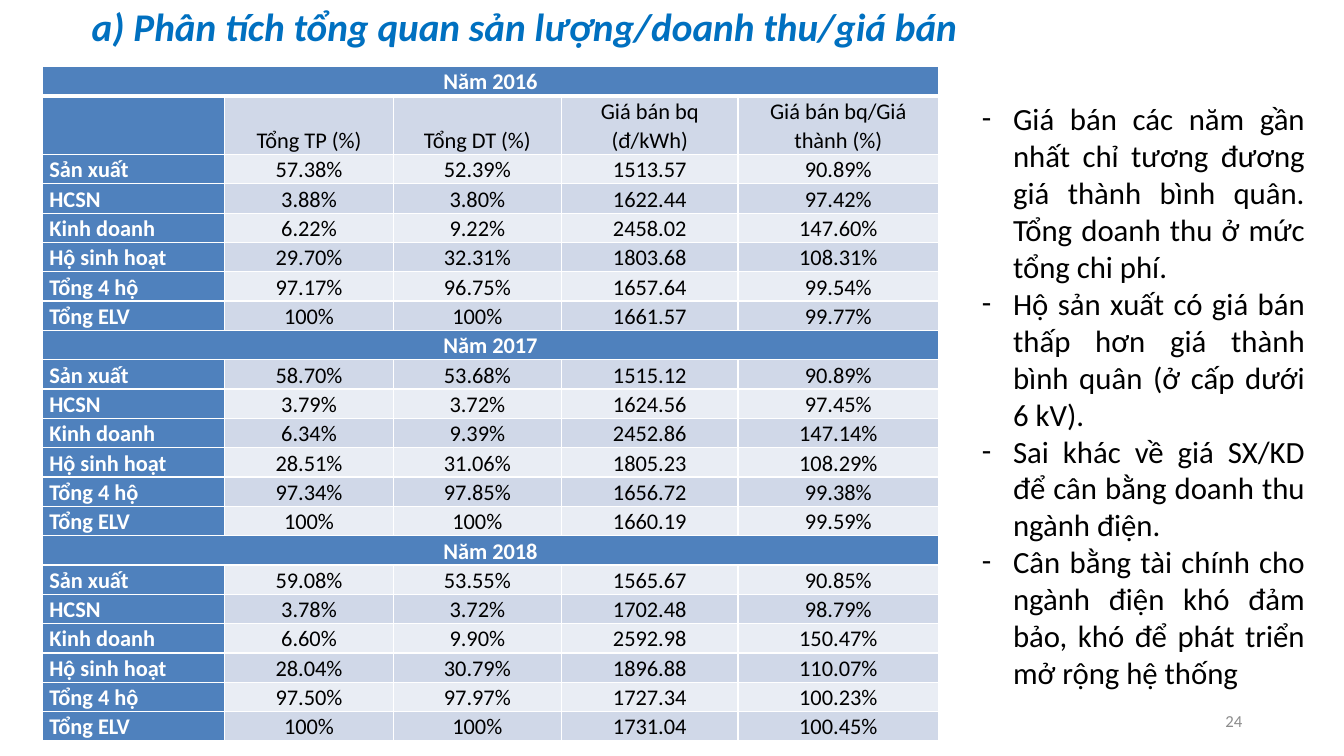
from lxml.etree import SubElement
from pptx import Presentation
from pptx.dml.color import RGBColor
from pptx.enum.text import MSO_ANCHOR as Anchor, PP_ALIGN as Align
from pptx.oxml.ns import qn
from pptx.util import Inches, Pt

# Content
TITLE = "a) Phân tích tổng quan sản lượng/doanh thu/giá bán"
PAGE_NUMBER = "24"
HEADINGS = ("", "Tổng TP (%)", "Tổng DT (%)", "Giá bán bq (đ/kWh)", "Giá bán bq/Giá thành (%)")
CUSTOMERS = ("Sản xuất", "HCSN", "Kinh doanh", "Hộ sinh hoạt", "Tổng 4 hộ", "Tổng ELV")
YEARS = {
    "Năm 2016": (
        ("57.38%", "52.39%", "1513.57", "90.89%"),
        ("3.88%", "3.80%", "1622.44", "97.42%"),
        ("6.22%", "9.22%", "2458.02", "147.60%"),
        ("29.70%", "32.31%", "1803.68", "108.31%"),
        ("97.17%", "96.75%", "1657.64", "99.54%"),
        ("100%", "100%", "1661.57", "99.77%"),
    ),
    "Năm 2017": (
        ("58.70%", "53.68%", "1515.12", "90.89%"),
        ("3.79%", "3.72%", "1624.56", "97.45%"),
        ("6.34%", "9.39%", "2452.86", "147.14%"),
        ("28.51%", "31.06%", "1805.23", "108.29%"),
        ("97.34%", "97.85%", "1656.72", "99.38%"),
        ("100%", "100%", "1660.19", "99.59%"),
    ),
    "Năm 2018": (
        ("59.08%", "53.55%", "1565.67", "90.85%"),
        ("3.78%", "3.72%", "1702.48", "98.79%"),
        ("6.60%", "9.90%", "2592.98", "150.47%"),
        ("28.04%", "30.79%", "1896.88", "110.07%"),
        ("97.50%", "97.97%", "1727.34", "100.23%"),
        ("100%", "100%", "1731.04", "100.45%"),
    ),
}
REMARKS = (
    "Giá bán các năm gần nhất chỉ tương đương giá thành bình quân. "
    "Tổng doanh thu ở mức tổng chi phí.",
    "Hộ sản xuất có giá bán thấp hơn giá thành bình quân (ở cấp dưới 6 kV).",
    "Sai khác về giá SX/KD để cân bằng doanh thu ngành điện.",
    "Cân bằng tài chính cho ngành điện khó đảm bảo, khó để phát triển mở rộng hệ thống",
)


class Theme:
    font = "Calibri"
    title, header, dark_band, light_band = "0070C0", "4F81BD", "D0D8E8", "E9EDF4"
    white, black, grey = "FFFFFF", "000000", "8C8C8C"
    title_size, remark_size, table_size, page_size = 28, 22, 16, 12


# Layout, in inches
COLUMN_WIDTHS = (1.81, 1.67, 1.67, 1.75, 1.99)
ROW_HEIGHT, HEADING_HEIGHT = 0.28, 0.46
REMARK_INDENT = 0.31


def write(paragraph, text, size, color=Theme.black, bold=False, italic=False,
          align=Align.LEFT, spacing=None):
    paragraph.alignment = align
    paragraph.line_spacing = spacing
    run = paragraph.add_run()
    run.text = text
    run.font.name, run.font.size = Theme.font, Pt(size)
    run.font.bold, run.font.italic = bold, italic
    run.font.color.rgb = RGBColor.from_string(color)


def set_borders(cell, **widths):
    properties = cell._tc.get_or_add_tcPr()
    for position, side in enumerate("LRTB"):
        line = SubElement(properties, qn(f"a:ln{side}"), w=str(Pt(widths.get(side, 1))))
        SubElement(SubElement(line, qn("a:solidFill")), qn("a:srgbClr"), val=Theme.white)
        properties.insert(position, line)


def add_bullet(paragraph, indent):
    properties = paragraph._p.get_or_add_pPr()
    properties.set("marL", str(Inches(indent)))
    properties.set("indent", str(-Inches(indent)))
    SubElement(properties, qn("a:buFont"), typeface=Theme.font)
    SubElement(properties, qn("a:buChar"), char="-")


def build_rows():
    rows = []
    for year, figures in YEARS.items():
        rows.append((year, "", "", "", ""))
        if len(rows) == 1:
            rows.append(HEADINGS)
        rows += [(customer, *values) for customer, values in zip(CUSTOMERS, figures)]
    return rows


def add_price_table(slide):
    rows = build_rows()
    height = ROW_HEIGHT * (len(rows) - 1) + HEADING_HEIGHT
    table = slide.shapes.add_table(
        len(rows), len(COLUMN_WIDTHS), Inches(0.42), Inches(0.66),
        Inches(sum(COLUMN_WIDTHS)), Inches(height)).table
    for column, width in zip(table.columns, COLUMN_WIDTHS):
        column.width = Inches(width)
    for r, values in enumerate(rows):
        is_year = values[0] in YEARS
        table.rows[r].height = Inches(HEADING_HEIGHT if values == HEADINGS else ROW_HEIGHT)
        if is_year:
            table.cell(r, 0).merge(table.cell(r, len(COLUMN_WIDTHS) - 1))
        for c, value in enumerate(values):
            cell = table.cell(r, c)
            is_header = is_year or c == 0
            band = Theme.dark_band if r % 2 else Theme.light_band
            cell.fill.solid()
            cell.fill.fore_color.rgb = RGBColor.from_string(Theme.header if is_header else band)
            set_borders(cell, T=3 if r == 1 else 1, B=3 if r == 0 else 1)
            cell.vertical_anchor = Anchor.BOTTOM
            cell.margin_left = cell.margin_right = Inches(0.07)
            cell.margin_top = cell.margin_bottom = 0
            if value:
                write(cell.text_frame.paragraphs[0], value, Theme.table_size,
                      color=Theme.white if is_header else Theme.black, bold=is_header,
                      align=Align.CENTER if is_year or c else Align.LEFT, spacing=1.07)


def add_frame(slide, left, top, width, height, anchor=Anchor.TOP):
    box = slide.shapes.add_textbox(Inches(left), Inches(top), Inches(width), Inches(height))
    box.text_frame.word_wrap = True
    box.text_frame.vertical_anchor = anchor
    return box.text_frame


def main():
    deck = Presentation()
    deck.slide_width, deck.slide_height = Inches(13.33), Inches(7.5)
    slide = deck.slides.add_slide(deck.slide_layouts[5])

    # Title
    title = slide.shapes.title
    title.left, title.top, title.width, title.height = map(Inches, (0.81, 0, 11.5, 0.58))
    title.text_frame.vertical_anchor = Anchor.MIDDLE
    write(title.text_frame.paragraphs[0], TITLE, Theme.title_size, color=Theme.title,
          bold=True, italic=True, align=Align.JUSTIFY, spacing=0.9)

    # Table of volume, revenue and price by year
    add_price_table(slide)

    # Remarks
    remarks = add_frame(slide, 9.64, 0.94, 3.4, 6.02)
    for i, remark in enumerate(REMARKS):
        paragraph = remarks.add_paragraph() if i else remarks.paragraphs[0]
        write(paragraph, remark, Theme.remark_size, align=Align.JUSTIFY)
        add_bullet(paragraph, REMARK_INDENT)

    # Page number
    page = add_frame(slide, 9.42, 6.95, 3, 0.4, anchor=Anchor.MIDDLE)
    write(page.paragraphs[0], PAGE_NUMBER, Theme.page_size, color=Theme.grey, align=Align.RIGHT)

    deck.save("out.pptx")


if __name__ == "__main__":
    main()
